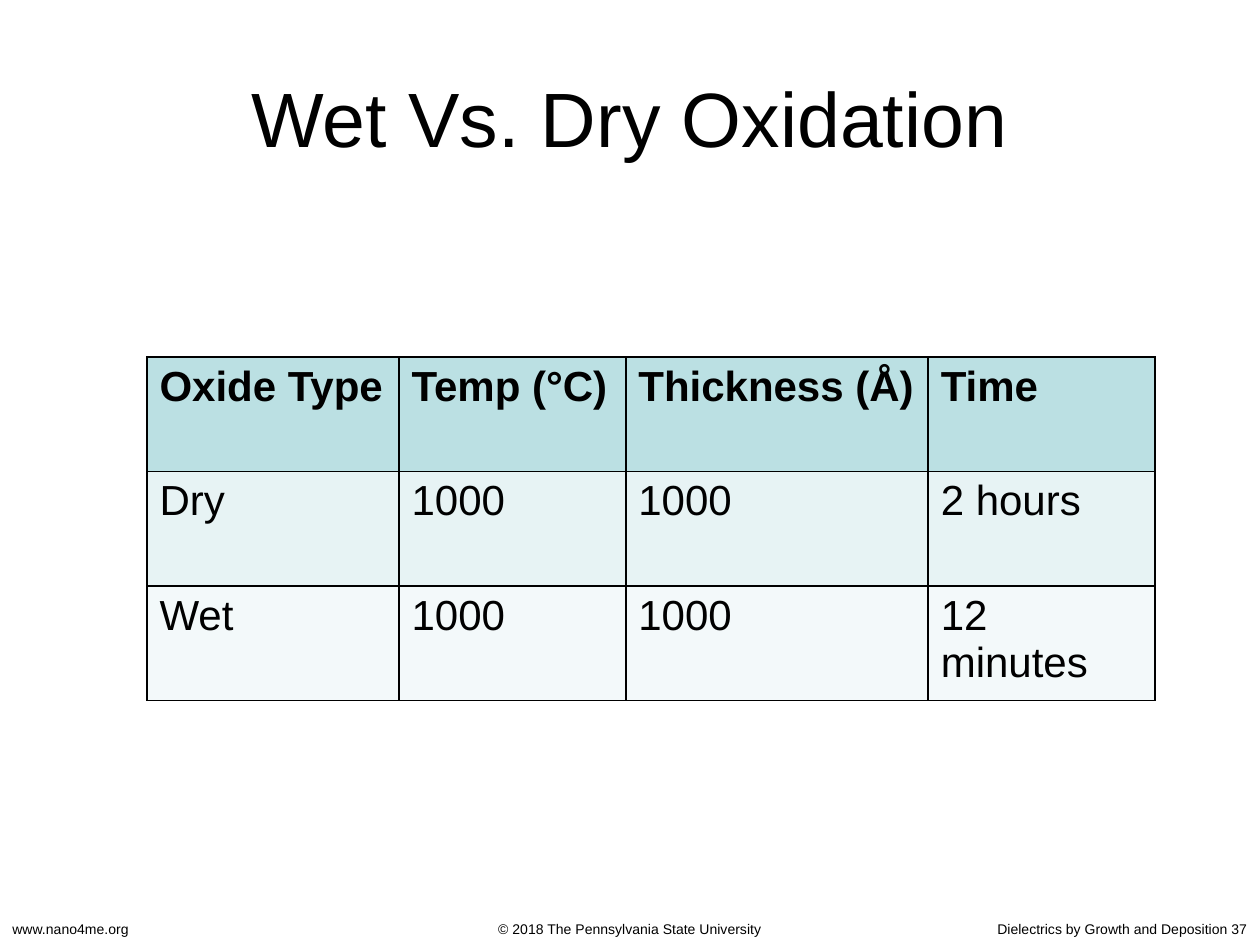
from lxml.etree import SubElement
from pptx import Presentation
from pptx.dml.color import RGBColor
from pptx.enum.text import MSO_ANCHOR as ANCHOR, PP_ALIGN as ALIGN
from pptx.oxml.ns import qn
from pptx.util import Pt


def rgb(value):
    return RGBColor.from_string(value)


class SlideBuilder:
    """Holds the text and line style and the current slide."""

    font = "Arial"
    ink = "000000"
    border = 1

    def __init__(self, slide):
        self.s = slide

    def style(self, p, size, bold=False):
        p.font.name = self.font
        p.font.size = Pt(size)
        p.font.bold = bold
        p.font.color.rgb = rgb(self.ink)

    def text(self, text, box, size, align, anchor=ANCHOR.TOP):
        sp = self.s.shapes.add_textbox(*map(Pt, box))
        tf = sp.text_frame
        tf.word_wrap = True
        tf.vertical_anchor = anchor
        p = tf.paragraphs[0]
        p.text = text
        p.alignment = align
        self.style(p, size)

    def borders(self, cell):
        tc_pr = cell._tc.get_or_add_tcPr()
        for side in ("lnL", "lnR", "lnT", "lnB"):
            ln = SubElement(tc_pr, qn(f"a:{side}"), w=str(Pt(self.border)))
            fill = SubElement(ln, qn("a:solidFill"))
            SubElement(fill, qn("a:srgbClr"), val=self.ink)

    def table(self, rows, left, top, widths, row_height, fills, size):
        frame = self.s.shapes.add_table(
            len(rows), len(widths), Pt(left), Pt(top),
            Pt(sum(widths)), Pt(row_height * len(rows)))
        table = frame.table
        table.horz_banding = False
        for column, width in zip(table.columns, widths):
            column.width = Pt(width)
        for i, (values, fill) in enumerate(zip(rows, fills)):
            table.rows[i].height = Pt(row_height)
            for j, value in enumerate(values):
                cell = table.cell(i, j)
                self.borders(cell)
                cell.fill.solid()
                cell.fill.fore_color.rgb = rgb(fill)
                p = cell.text_frame.paragraphs[0]
                p.text = value
                self.style(p, size, bold=i == 0)


def main():
    prs = Presentation()
    prs.slide_width, prs.slide_height = Pt(720), Pt(540)
    b = SlideBuilder(prs.slides.add_slide(prs.slide_layouts[6]))

    footers = (
        ("www.nano4me.org", ALIGN.LEFT),
        ("© 2018 The Pennsylvania State University", ALIGN.CENTER),
        ("Dielectrics by Growth and Deposition 37", ALIGN.RIGHT),
    )
    for text, align in footers:
        b.text(text, (0, 522.75, 720, 17.25), 8, align)

    b.text("Wet Vs. Dry Oxidation", (36, 21.6, 648, 90), 44,
           ALIGN.CENTER, ANCHOR.MIDDLE)

    rows = (
        ("Oxide Type", "Temp (°C)", "Thickness (Å)", "Time"),
        ("Dry", "1000", "1000", "2 hours"),
        ("Wet", "1000", "1000", "12 minutes"),
    )
    b.table(rows, 84, 204, (144, 129.6, 172.8, 129.6), 65.4,
            ("BBE0E3", "E7F3F4", "F3F9FA"), 24)

    prs.save("out.pptx")


if __name__ == "__main__":
    main()
